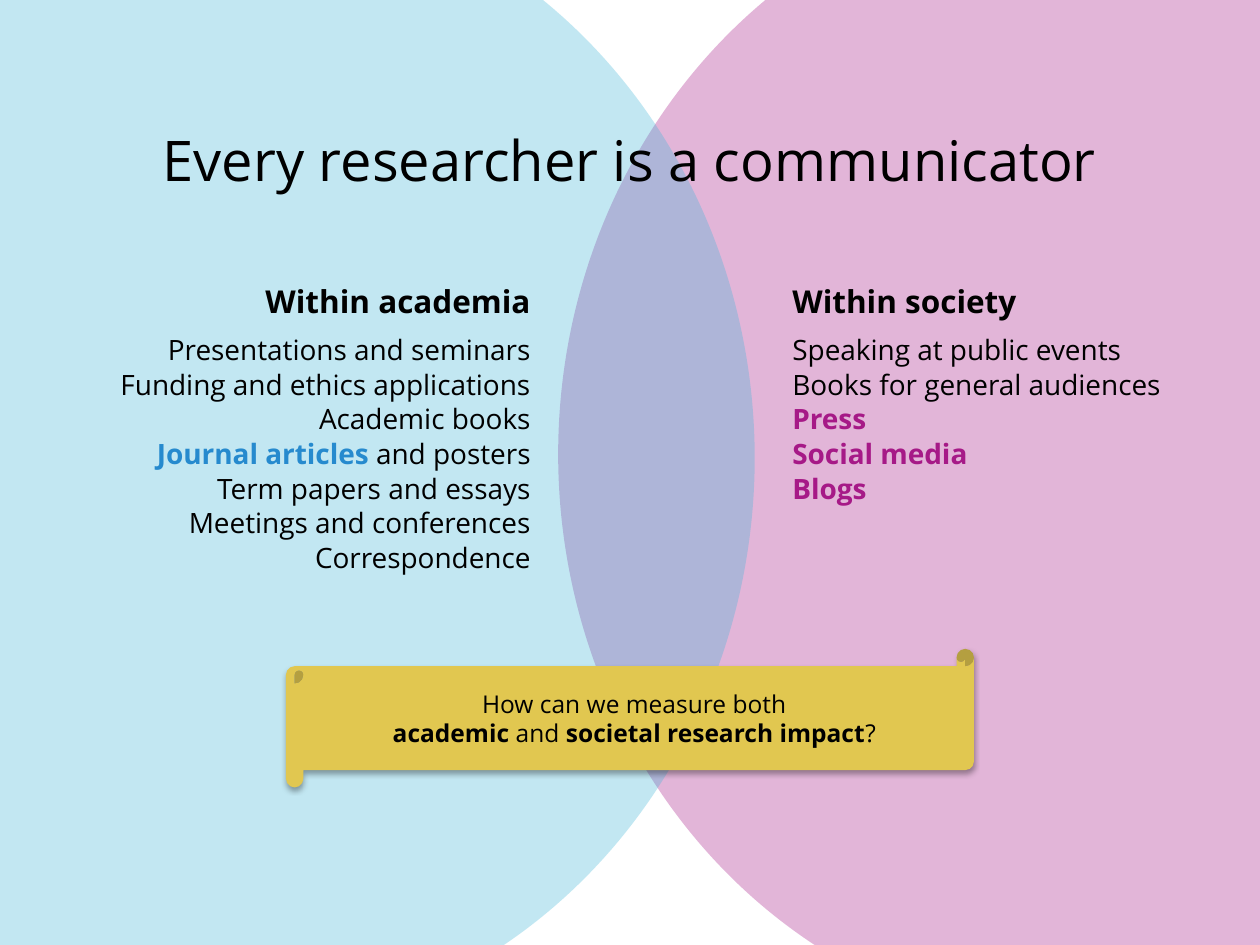
from dataclasses import dataclass

from lxml.etree import SubElement
from pptx import Presentation
from pptx.dml.color import RGBColor
from pptx.enum.shapes import MSO_SHAPE as Preset
from pptx.enum.text import MSO_ANCHOR as Anchor, PP_ALIGN as Align
from pptx.oxml.ns import qn
from pptx.util import Inches, Pt

FONT = "Open Sans"
BLACK = RGBColor(0x00, 0x00, 0x00)
MAGENTA = RGBColor(0xA6, 0x19, 0x87)
CYAN = RGBColor(0x43, 0xB7, 0xD9)
BLUE = RGBColor(0x26, 0x8A, 0xCE)
GOLD = RGBColor(0xE1, 0xC7, 0x50)

HEADING_TOP, HEADING_HEIGHT = 1.89, 0.7
COLUMN_WIDTH, LIST_HEIGHT = 4.42, 4.32
CIRCLE_WIDTH, CIRCLE_HEIGHT = 8.51, 9.13


@dataclass(frozen=True)
class Run:
    text: str
    bold: bool = False
    color: RGBColor = BLACK


@dataclass(frozen=True)
class Circle:
    left: float
    top: float
    color: RGBColor


@dataclass(frozen=True)
class Column:
    left: float
    align: Align
    heading: str
    lines: list[list[Run]]


CIRCLES = [Circle(4.43, -0.96, MAGENTA), Circle(-2.52, -0.93, CYAN)]

COLUMNS = [
    Column(-0.11, Align.RIGHT, "Within academia", [
        [Run("Presentations and seminars")],
        [Run("Funding and ethics applications")],
        [Run("Academic books")],
        [Run("Journal articles ", True, BLUE), Run("and posters")],
        [Run("Term papers and essays")],
        [Run("Meetings and conferences")],
        [Run("Correspondence")],
    ]),
    Column(6.19, Align.LEFT, "Within society", [
        [Run("Speaking at public events")],
        [Run("Books for general audiences")],
        [Run("Press", True, MAGENTA)],
        [Run("Social media", True, MAGENTA)],
        [Run("Blogs", True, MAGENTA)],
    ]),
]

QUESTION = [
    [Run("How can we measure both")],
    [Run("academic", True), Run(" and "), Run("societal research impact", True), Run("?")],
]


def write_text(shape, lines: list[list[Run]], *, size: float, align: Align,
               anchor: Anchor = Anchor.TOP, space_before: float = 0) -> None:
    frame = shape.text_frame
    frame.word_wrap = True
    frame.vertical_anchor = anchor
    for index, line in enumerate(lines):
        paragraph = frame.add_paragraph() if index else frame.paragraphs[0]
        paragraph.alignment = align
        paragraph.space_before = Pt(space_before)
        for part in line:
            run = paragraph.add_run()
            run.text = part.text
            run.font.name = FONT
            run.font.size = Pt(size)
            run.font.bold = part.bold
            run.font.color.rgb = part.color


def add_text(slide, left: float, top: float, width: float, height: float,
             lines: list[list[Run]], **text_format) -> None:
    box = slide.shapes.add_textbox(Inches(left), Inches(top), Inches(width), Inches(height))
    write_text(box, lines, **text_format)


def add_filled_shape(slide, preset: Preset, left: float, top: float,
                     width: float, height: float, color: RGBColor):
    shape = slide.shapes.add_shape(
        preset, Inches(left), Inches(top), Inches(width), Inches(height))
    shape.shadow.inherit = False
    shape.fill.solid()
    shape.fill.fore_color.rgb = color
    shape.line.fill.background()
    return shape


def set_alpha(color_element, percent: int) -> None:
    SubElement(color_element, qn("a:alpha"), val=str(percent * 1000))


def add_circle(slide, circle: Circle) -> None:
    shape = add_filled_shape(slide, Preset.OVAL, circle.left, circle.top,
                             CIRCLE_WIDTH, CIRCLE_HEIGHT, circle.color)
    set_alpha(shape.element.spPr.find(qn("a:solidFill")).find(qn("a:srgbClr")), 32)


def add_column(slide, column: Column) -> None:
    add_text(slide, column.left, HEADING_TOP, COLUMN_WIDTH, HEADING_HEIGHT,
             [[Run(column.heading, True)]], size=18, align=column.align,
             anchor=Anchor.BOTTOM)
    add_text(slide, column.left, HEADING_TOP + HEADING_HEIGHT, COLUMN_WIDTH, LIST_HEIGHT,
             column.lines, size=16, align=column.align, space_before=0.6)


def add_drop_shadow(shape) -> None:
    effects = shape.element.spPr.find(qn("a:effectLst"))
    shadow = SubElement(effects, qn("a:outerShdw"), blurRad=str(Pt(3.1)),
                        dist=str(Pt(1.8)), dir=str(90 * 60000), rotWithShape="0")
    set_alpha(SubElement(shadow, qn("a:srgbClr"), val=str(BLACK)), 35)


def main() -> None:
    presentation = Presentation()
    presentation.slide_width = Inches(10)
    presentation.slide_height = Inches(7.5)
    slide = presentation.slides.add_slide(presentation.slide_layouts[6])

    for circle in CIRCLES:
        add_circle(slide, circle)
    add_text(slide, 0.5, 0.64, 9, 1.25, [[Run("Every researcher is a communicator")]],
             size=32, align=Align.CENTER, anchor=Anchor.MIDDLE)
    for column in COLUMNS:
        add_column(slide, column)

    scroll = add_filled_shape(slide, Preset.HORIZONTAL_SCROLL, 2.27, 5.15, 5.46, 1.1, GOLD)
    add_drop_shadow(scroll)
    write_text(scroll, QUESTION, size=14, align=Align.CENTER, anchor=Anchor.MIDDLE)

    presentation.save("out.pptx")


if __name__ == "__main__":
    main()
